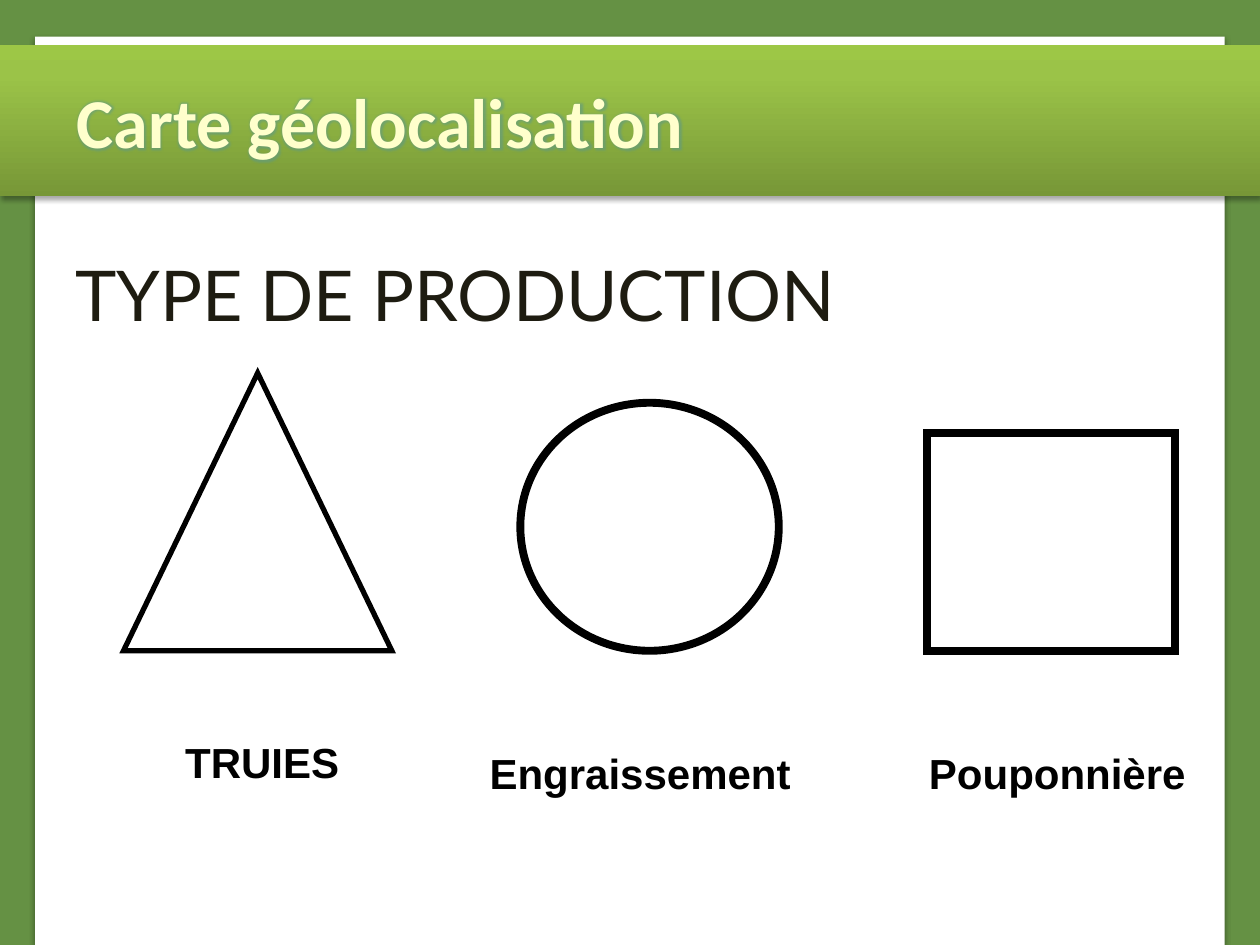
from dataclasses import dataclass

import lxml.etree
import pptx
import pptx.dml.color
import pptx.enum.shapes
import pptx.enum.text
import pptx.oxml
import pptx.oxml.ns
import pptx.util

Cm, Pt = pptx.util.Cm, pptx.util.Pt
SHAPE = pptx.enum.shapes.MSO_SHAPE
ALIGN = pptx.enum.text.PP_ALIGN
ANCHOR = pptx.enum.text.MSO_ANCHOR
FIT = pptx.enum.text.MSO_AUTO_SIZE
NAMESPACE = pptx.oxml.ns.nsdecls("a")


@dataclass(frozen=True)
class Theme:
    frame: str = "659144"
    paper: str = "FFFFFF"
    ink: str = "000000"
    heading: str = "FFFFCC"
    glow: str = "5F9A86"
    title: str = "1E1C11"
    band: tuple = ((0, "779737"), (80, "9BC348"), (100, "9DC746"))
    title_size: int = 40
    label_size: int = 24


THEME = Theme()


def rgb(value):
    return pptx.dml.color.RGBColor.from_string(value)


def add_figure(page, kind, box, fill, line=None, width=0):
    """Place a preset shape; box is left, top, width, height in cm."""
    figure = page.shapes.add_shape(kind, *map(Cm, box))
    figure.shadow.inherit = False
    figure.fill.solid()
    figure.fill.fore_color.rgb = rgb(fill)
    if line:
        figure.line.color.rgb = rgb(line)
        figure.line.width = Pt(width)
        lxml.etree.SubElement(
            figure.line._get_or_add_ln(), pptx.oxml.ns.qn("a:miter"), lim="800000")
    else:
        figure.line.fill.background()
    return figure


def add_text(page, box, text, color, formats, align=ALIGN.LEFT,
             anchor=ANCHOR.TOP, fit=FIT.NONE):
    area = page.shapes.add_textbox(*map(Cm, box))
    frame = area.text_frame
    settings = {"word_wrap": True, "auto_size": fit, "vertical_anchor": anchor}
    for name, value in settings.items():
        setattr(frame, name, value)
    para = frame.paragraphs[0]
    para.alignment = align
    span = para.add_run()
    span.text = text
    for name, value in formats.items():
        setattr(span.font, name, value)
    span.font.color.rgb = rgb(color)
    return span


def add_shadow(figure):
    effects = figure._element.spPr.find(pptx.oxml.ns.qn("a:effectLst"))
    effects.append(pptx.oxml.parse_xml(
        f'<a:outerShdw {NAMESPACE} blurRad="{Pt(3.1)}" dist="{Pt(1.8)}" '
        'dir="5400000" rotWithShape="0"><a:srgbClr val="000000">'
        '<a:alpha val="35000"/></a:srgbClr></a:outerShdw>'))


def add_glow(span):
    color = span.font._element.find(pptx.oxml.ns.qn("a:solidFill"))
    color.addnext(pptx.oxml.parse_xml(
        f'<a:effectLst {NAMESPACE}><a:glow rad="{Pt(4)}">'
        f'<a:srgbClr val="{THEME.glow}"><a:alpha val="60000"/></a:srgbClr>'
        '</a:glow></a:effectLst>'))


def set_band_gradient(figure):
    figure.fill.gradient()
    figure.fill.gradient_angle = 90
    stops = figure._element.spPr.find(".//" + pptx.oxml.ns.qn("a:gsLst"))
    for stop in list(stops):
        stops.remove(stop)
    for position, color in THEME.band:
        stops.append(pptx.oxml.parse_xml(
            f'<a:gs {NAMESPACE} pos="{position * 1000}">'
            f'<a:srgbClr val="{color}"/></a:gs>'))


def build_background(page, box):
    left, top, width, height = box
    margin, drop = 0.71, 0.74
    add_figure(page, SHAPE.RECTANGLE, box, THEME.frame, THEME.frame, 2)
    panel = (left + margin, top + drop, width - 2 * margin, height - drop)
    add_shadow(add_figure(page, SHAPE.RECTANGLE, panel, THEME.paper))


def build_banner(page, box, text):
    left, top, width, height = box
    band = add_figure(page, SHAPE.RECTANGLE, box, THEME.paper)
    set_band_gradient(band)
    add_shadow(band)
    formats = {"name": "Calibri", "size": Pt(THEME.title_size), "bold": True}
    area = (left + 1.3, top + 0.54, width - 3.02, 1.96)
    add_glow(add_text(page, area, text, THEME.heading, formats,
                      anchor=ANCHOR.MIDDLE, fit=FIT.SHAPE_TO_FIT_TEXT))


def build_title(page, box, text):
    formats = {"name": "Lato", "size": Pt(THEME.title_size)}
    add_text(page, box, text, THEME.title, formats, anchor=ANCHOR.MIDDLE)


def build_legend_item(page, box, kind, size, inset, weight, text, label_top):
    """Stand the symbol on the box's base line, with its label below."""
    left, top, width, height = box
    symbol_width, symbol_height = size
    symbol = (left + inset, top + height - symbol_height, *size)
    add_figure(page, kind, symbol, THEME.paper, THEME.ink, weight)
    formats = {"name": "Arial", "size": Pt(THEME.label_size), "bold": True}
    add_text(page, (left, top + label_top, width, 1.27), text, THEME.ink,
             formats, ALIGN.CENTER, fit=FIT.SHAPE_TO_FIT_TEXT)


def main():
    deck = pptx.Presentation()
    deck.slide_width, deck.slide_height = Cm(25.4), Cm(19.05)
    page = deck.slides.add_slide(deck.slide_layouts[6])

    # Frame, banner and title
    build_background(page, (0, 0, 25.4, 19.05))
    build_banner(page, (0, 0.91, 25.4, 3.05), "Carte géolocalisation")
    build_title(page, (1.27, 4.32, 22.86, 3.18), "TYPE DE PRODUCTION")

    # Legend: column left and width, symbol, size, inset, line, label, label top
    items = (
        (2.29, 5.99, SHAPE.ISOSCELES_TRIANGLE, (5.41, 5.6), 0.2, 3, "TRUIES", 7.21),
        (9.5, 6.81, SHAPE.OVAL, (5.21, 5), 0.99, 4.5, "Engraissement", 7.42),
        (17.91, 6.81, SHAPE.RECTANGLE, (5, 4.39), 0.78, 4.5, "Pouponnière", 7.42),
    )
    for left, width, *details in items:
        build_legend_item(page, (left, 7.52, width, 5.6), *details)

    deck.save("out.pptx")


if __name__ == "__main__":
    main()
